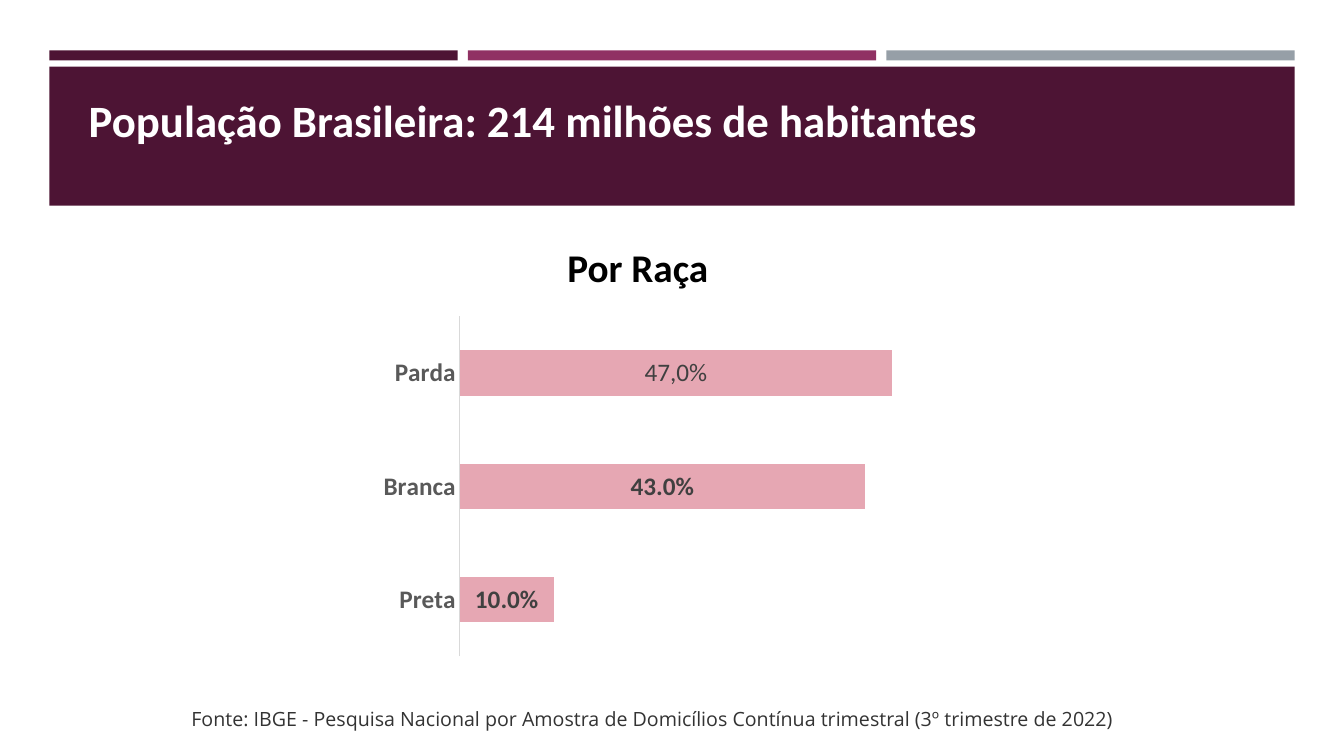
from lxml import etree
from pptx import Presentation
from pptx import util as u
from pptx.chart import data as chart_data
from pptx.dml.color import RGBColor
from pptx.enum import chart as ch, shapes, text
from pptx.oxml import ns

PLUM = RGBColor(0x4D, 0x14, 0x34)
MAGENTA = RGBColor(0x90, 0x31, 0x63)
SLATE = RGBColor(0x96, 0x9F, 0xA7)
ROSE = RGBColor(0xE6, 0xA7, 0xB3)
WHITE = RGBColor(0xFF, 0xFF, 0xFF)
BLACK = RGBColor(0, 0, 0)
INK = RGBColor(0x33, 0x33, 0x33)
LABEL_GREY = RGBColor(0x40, 0x40, 0x40)
AXIS_GREY = RGBColor(0x59, 0x59, 0x59)
RULE_GREY = RGBColor(0xD9, 0xD9, 0xD9)

deck = Presentation()
deck.slide_width, deck.slide_height = u.Inches(13.33), u.Inches(7.5)
slide = deck.slides.add_slide(deck.slide_layouts[5])
MARGIN, STRIP, GUTTER = 0.49, 4.05, 0.1


def style(font, size, color, bold=False, name="Calibri"):
    formats = {"size": u.Pt(size), "bold": bold, "name": name}
    for key, value in formats.items():
        setattr(font, key, value)
    font.color.rgb = color


def write(box, place, words, *look):
    for side, length in zip(("left", "top", "width", "height"), place):
        setattr(box, side, u.Inches(length))
    frame = box.text_frame
    formats = {"word_wrap": True, "vertical_anchor": text.MSO_ANCHOR.TOP,
               "auto_size": text.MSO_AUTO_SIZE.SHAPE_TO_FIT_TEXT}
    for key, value in formats.items():
        setattr(frame, key, value)
    line = frame.paragraphs[0]
    line.alignment = text.PP_ALIGN.LEFT
    run = line.add_run()
    run.text = words
    style(run.font, *look)


bands = [(MARGIN + column * (STRIP + GUTTER), 0.5, STRIP, 0.1, color)
         for column, color in enumerate((PLUM, MAGENTA, SLATE))]
bands.append((MARGIN, 0.66, 3 * STRIP + 2 * GUTTER, 1.38, PLUM))
for *place, color in bands:
    band = slide.shapes.add_shape(shapes.MSO_SHAPE.RECTANGLE, *map(u.Inches, place))
    band.fill.solid()
    band.fill.fore_color.rgb = color
    band.line.fill.background()
    band.shadow.inherit = False

race_data = chart_data.CategoryChartData(number_format="0.0%")
race_data.categories = ["Preta", "Branca", "Parda"]
race_data.add_series("Series 1", (0.1, 0.43, 0.459))
race_chart = slide.shapes.add_chart(
    ch.XL_CHART_TYPE.BAR_CLUSTERED, *map(u.Inches, (2.65, 2.93, 6.65, 3.79)), race_data).chart
race_chart.has_legend = False
race_chart.has_title = False
style(race_chart.font, 10, BLACK)

races = race_chart.category_axis
races.major_tick_mark = ch.XL_TICK_MARK.NONE
races.format.line.color.rgb = RULE_GREY
races.format.line.width = u.Pt(0.75)
style(races.tick_labels.font, 18, AXIS_GREY, True)

shares = race_chart.value_axis
for key, value in {"visible": False, "has_major_gridlines": False,
                   "minimum_scale": 0, "maximum_scale": 0.5}.items():
    setattr(shares, key, value)

bars = race_chart.plots[0]
bars.gap_width = 150
bars.vary_by_categories = False
population = bars.series[0]
population.format.fill.solid()
population.format.fill.fore_color.rgb = ROSE
percents = population.data_labels
for key, value in {"show_value": True, "number_format": "0.0%", "number_format_is_linked": False,
                   "position": ch.XL_LABEL_POSITION.CENTER}.items():
    setattr(percents, key, value)
style(percents.font, 18, LABEL_GREY, True)

parda = population.points[2].data_label
parda_run = parda.text_frame.paragraphs[0].add_run()
parda_run.text = "47,0%"
style(parda_run.font, 18, LABEL_GREY)
parda.position = ch.XL_LABEL_POSITION.CENTER

plot_area = race_chart.element.find(".//" + ns.qn("c:plotArea"))
for old_layout in plot_area.findall(ns.qn("c:layout")):
    plot_area.remove(old_layout)
layout = etree.Element(ns.qn("c:layout"))
plot_area.insert(0, layout)
manual = etree.SubElement(layout, ns.qn("c:manualLayout"))
for tag, value in (("layoutTarget", "inner"), ("xMode", "edge"), ("yMode", "edge"),
                   ("x", 0.287), ("y", 0.055), ("w", 0.703), ("h", 0.89)):
    etree.SubElement(manual, ns.qn("c:" + tag)).set("val", str(value))

headline = slide.shapes.title
slide.shapes.element.append(headline.element)
write(headline, (0.78, 0.87, 12.19, 0.64),
      "População Brasileira: 214 milhões de habitantes", 32, WHITE, True)

captions = [
    ((5.53, 2.36, 3.33, 0.57), "Por Raça", 28, BLACK, True),
    ((1.8, 6.96, 9.73, 0.34),
     "Fonte: IBGE - Pesquisa Nacional por Amostra de Domicílios Contínua trimestral "
     "(3º trimestre de 2022)", 14, INK, False, "Open Sans"),
]
for caption in captions:
    write(slide.shapes.add_textbox(0, 0, 0, 0), *caption)

deck.save("out.pptx")
